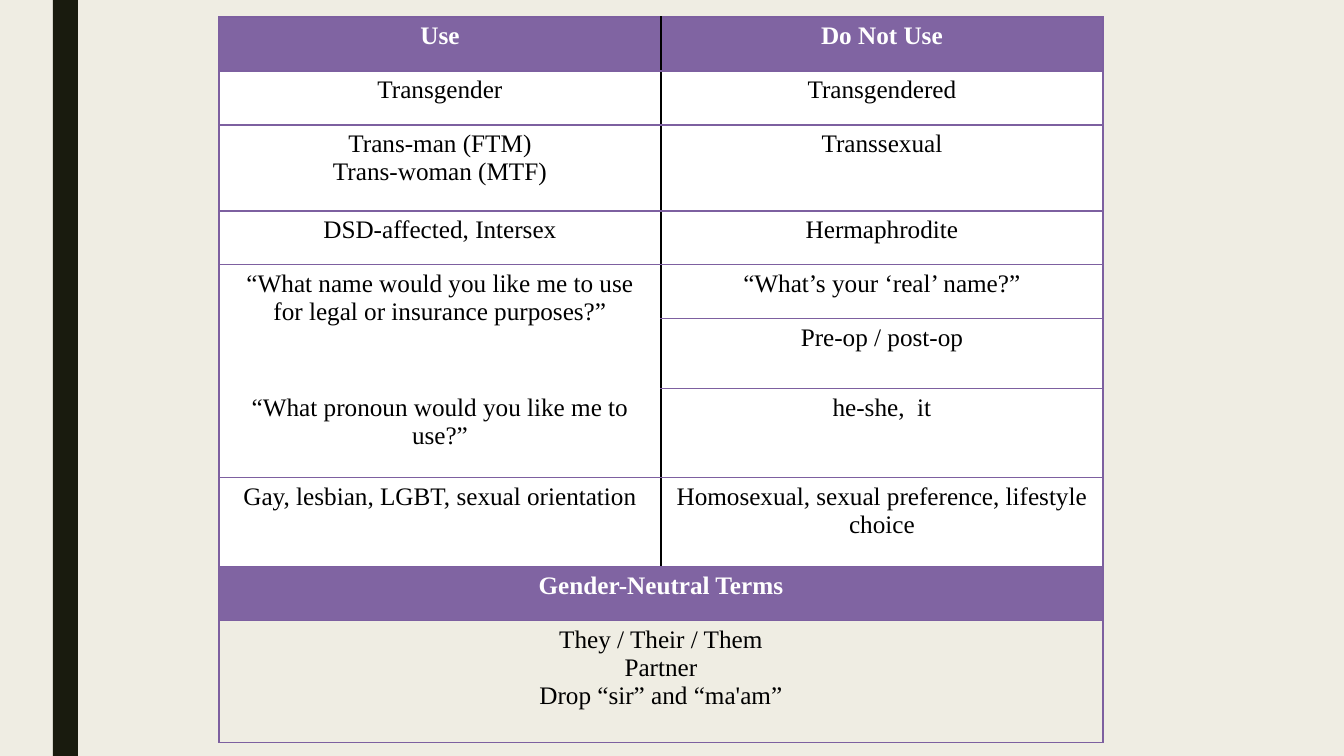
from lxml import etree
from pptx import Presentation
from pptx.dml.color import RGBColor
from pptx.enum.shapes import MSO_SHAPE
from pptx.enum.text import PP_ALIGN
from pptx.oxml.ns import qn
from pptx.util import Emu, Pt

RECT = MSO_SHAPE.RECTANGLE
CENTER = PP_ALIGN.CENTER
FONT = "Times New Roman"
SLIDE_W, SLIDE_H = 1344, 756
COLORS = {
    "page": "EFEDE3",
    "bar": "191B0E",
    "header": "8064A2",
    "rule": "7D60A0",
    "white": "FFFFFF",
    "black": "000000",
}

TABLE_LEFT, TABLE_TOP, COL_W = 219, 17, 442
# Height of each row, with its text for the left and right column
ROWS = [
    (54, "Use", "Do Not Use"),
    (54, "Transgender", "Transgendered"),
    (86, "Trans-man (FTM)\nTrans-woman (MTF)", "Transsexual"),
    (54, "DSD-affected, Intersex", "Hermaphrodite"),
    (54, "“What name would you like me to use for legal or insurance purposes?”",
     "“What’s your ‘real’ name?”"),
    (70, None, "Pre-op / post-op"),
    (89, "“What pronoun would you like me to use?”", "he-she,  it"),
    (89, "Gay, lesbian, LGBT, sexual orientation",
     "Homosexual, sexual preference, lifestyle choice"),
    (54, "Gender-Neutral Terms", None),
    (122, ["They / Their / Them", "Partner\nDrop “sir” and “ma'am”"], None),
]
NAME_ROW, PRONOUN_ROW = 4, 6
HEADER_ROWS = (0, 8)
FULL_WIDTH_ROWS = (8, 9)
TERMS_ROW = 9


def px(n):
    return Emu(round(n * 914400 / 100.8))


def rgb(name):
    return RGBColor.from_string(COLORS[name])


def add_bar(s, left, top, width, height):
    bar = s.shapes.add_shape(RECT, px(left), px(top), px(width), px(height))
    bar.shadow.inherit = False
    bar.fill.solid()
    bar.fill.fore_color.rgb = rgb("bar")
    bar.line.fill.background()


def write_text(cell, paragraphs, color, bold):
    tf = cell.text_frame
    for i, text in enumerate(paragraphs):
        p = tf.add_paragraph() if i else tf.paragraphs[0]
        p.alignment = CENTER
        for j, line in enumerate(text.split("\n")):
            if j:
                p.add_line_break()
            r = p.add_run()
            r.text = line
            r.font.name = FONT
            r.font.size = Pt(18)
            r.font.bold = bold
            r.font.color.rgb = rgb(color)


def set_borders(cell, borders):
    """Give each side, in the order L, R, T, B, a colour name or None."""
    tc_pr = cell._tc.get_or_add_tcPr()
    for i, (side, color) in enumerate(borders.items()):
        ln = etree.Element(qn("a:ln" + side), w=str(Pt(1)))
        if color:
            fill = etree.SubElement(ln, qn("a:solidFill"))
            etree.SubElement(fill, qn("a:srgbClr"), val=COLORS[color])
        else:
            etree.SubElement(ln, qn("a:noFill"))
        tc_pr.insert(i, ln)


def cell_borders(row, col):
    borders = dict.fromkeys("LRTB", "rule")
    if row not in FULL_WIDTH_ROWS:
        borders["L" if col else "R"] = "black"
    # The two questions on the left share one open area
    if col == 0 and NAME_ROW <= row <= PRONOUN_ROW:
        if row > NAME_ROW:
            borders["T"] = None
        if row < PRONOUN_ROW:
            borders["B"] = None
    return borders


def add_terms_table(s):
    height = sum(row[0] for row in ROWS)
    frame = s.shapes.add_table(len(ROWS), 2, px(TABLE_LEFT), px(TABLE_TOP),
                               px(2 * COL_W), px(height))
    table = frame.table
    table.first_row = table.horz_banding = False
    for column in table.columns:
        column.width = px(COL_W)

    # Merged cells
    table.cell(NAME_ROW, 0).merge(table.cell(NAME_ROW + 1, 0))
    for row in FULL_WIDTH_ROWS:
        table.cell(row, 0).merge(table.cell(row, 1))

    # Text, fills and borders
    for i, (row_height, *texts) in enumerate(ROWS):
        table.rows[i].height = px(row_height)
        header = i in HEADER_ROWS
        for j, text in enumerate(texts):
            cell = table.cell(i, j)
            if i == TERMS_ROW:
                cell.fill.background()
            else:
                cell.fill.solid()
                cell.fill.fore_color.rgb = rgb("header" if header else "white")
            if text:
                paragraphs = [text] if isinstance(text, str) else text
                write_text(cell, paragraphs, "white" if header else "black", header)
            set_borders(cell, cell_borders(i, j))


def main():
    prs = Presentation()
    prs.slide_width, prs.slide_height = px(SLIDE_W), px(SLIDE_H)
    s = prs.slides.add_slide(prs.slide_layouts[6])

    # Background and side bar
    s.background.fill.solid()
    s.background.fill.fore_color.rgb = rgb("page")
    add_bar(s, 53, 0, 25, SLIDE_H)

    # Table of terms
    add_terms_table(s)
    prs.save("out.pptx")


if __name__ == "__main__":
    main()
